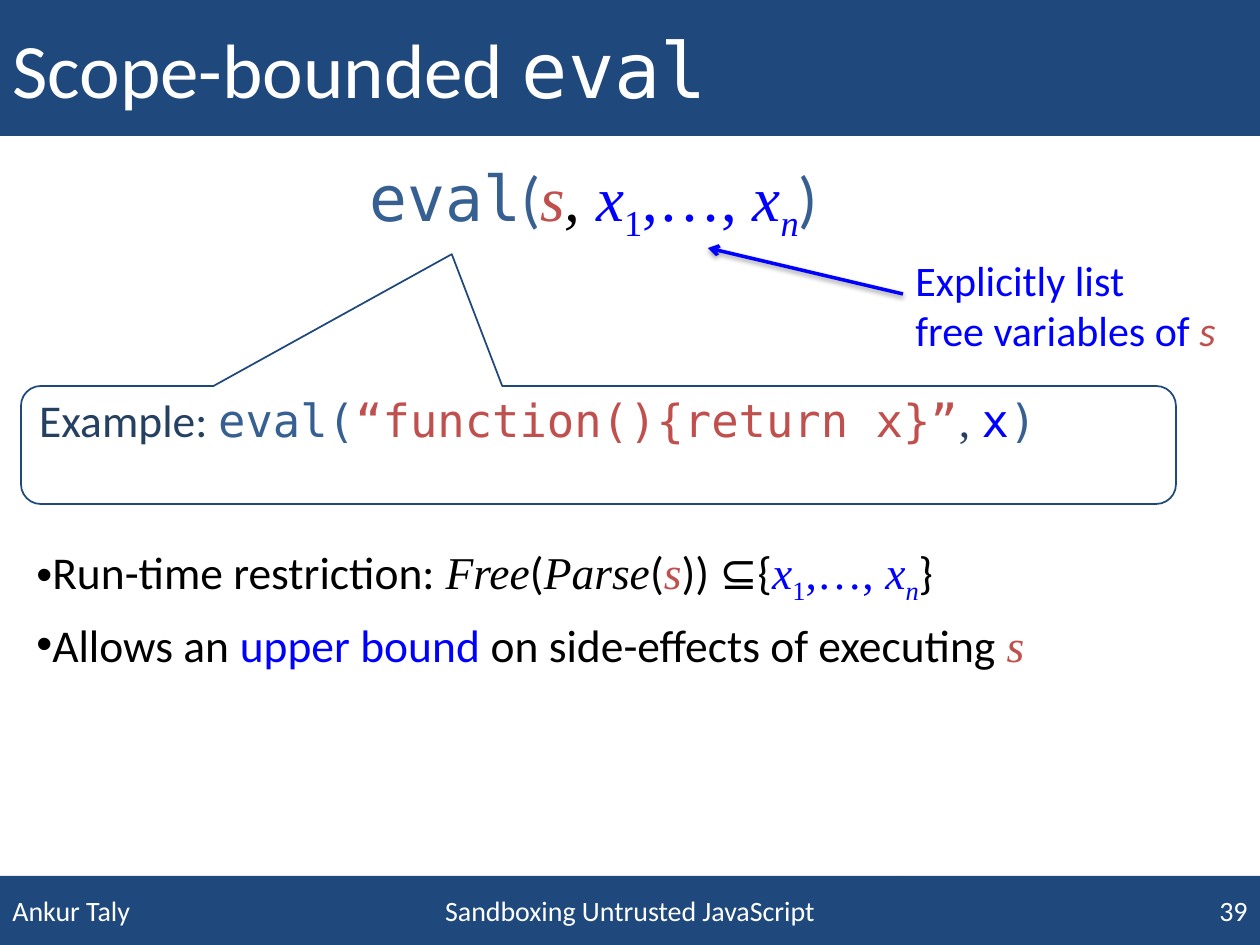
from lxml.etree import SubElement
from pptx import Presentation
from pptx.dml.color import RGBColor
from pptx.enum.shapes import MSO_CONNECTOR, MSO_SHAPE
from pptx.enum.text import MSO_ANCHOR as Anchor, MSO_AUTO_SIZE as AutoSize, PP_ALIGN as Align
from pptx.oxml.ns import qn
from pptx.util import Emu, Pt

SLIDE_WIDTH, SLIDE_HEIGHT = 1260, 945
COLORS = {
    "navy": "1F497D", "white": "FFFFFF", "black": "000000", "label": "254061",
    "steel": "376092", "red": "C0504D", "blue": "0000FF",
}
# Style name: font, italic, baseline shift in thousandths of a percent
STYLES = {
    "text": ("Calibri", False, 0),
    "slanted": ("Calibri", True, 0),
    "code": ("DejaVu Sans Mono", False, 0),
    "serif": ("Times New Roman", False, 0),
    "math": ("Times New Roman", True, 0),
    "sub": ("Times New Roman", False, -25000),
    "math sub": ("Times New Roman", True, -25000),
}
VARIABLES = [
    ("x", "math", "blue"), ("1", "sub", "blue"), (",…, ", "serif", "blue"),
    ("x", "math", "blue"), ("n", "math sub", "blue"),
]


def px(length):
    return Emu(round(length * 914400 / 126))


def color(name):
    return RGBColor.from_string(COLORS[name])


def write(frame, paragraphs, size, align=Align.LEFT):
    """Fill a text frame; each paragraph is a list of (text, style, color)."""
    frame.word_wrap = True
    for index, runs in enumerate(paragraphs):
        paragraph = frame.paragraphs[0] if index == 0 else frame.add_paragraph()
        paragraph.alignment = align
        for text, style, color_name in runs:
            run = paragraph.add_run()
            run.text = text
            font = run.font
            font.name, font.italic, baseline = STYLES[style]
            font.size = Pt(size)
            font.color.rgb = color(color_name)
            if baseline:
                font._element.set("baseline", str(baseline))


def add_text(slide, box, paragraphs, size):
    shape = slide.shapes.add_textbox(*map(px, box))
    write(shape.text_frame, paragraphs, size)
    shape.text_frame.auto_size = AutoSize.SHAPE_TO_FIT_TEXT
    return shape


def add_bar(slide, box, runs, size, align=Align.LEFT):
    bar = slide.shapes.add_shape(MSO_SHAPE.RECTANGLE, *map(px, box))
    bar.shadow.inherit = False
    bar.fill.solid()
    bar.fill.fore_color.rgb = color("navy")
    bar.line.fill.background()
    bar.text_frame.vertical_anchor = Anchor.MIDDLE
    write(bar.text_frame, [runs], size, align)


def add_footer(slide, box):
    left, top, width, height = box
    side = 357
    cells = [
        ("Ankur Taly", side, Align.LEFT),
        ("Sandboxing Untrusted JavaScript", width - 2 * side, Align.CENTER),
        ("39", side, Align.RIGHT),
    ]
    for text, cell_width, align in cells:
        add_bar(slide, (left, top, cell_width, height), [(text, "text", "white")], 16, align)
        left += cell_width


def add_example(slide, box):
    callout = slide.shapes.add_shape(MSO_SHAPE.ROUNDED_RECTANGULAR_CALLOUT, *map(px, box))
    for index, value in enumerate((-0.127, -1.617, 0.167)):
        callout.adjustments[index] = value
    callout.shadow.inherit = False
    callout.fill.solid()
    callout.fill.fore_color.rgb = color("white")
    callout.line.color.rgb = color("navy")
    callout.line.width = Pt(1)
    callout.text_frame.vertical_anchor = Anchor.TOP
    callout.text_frame.margin_top = 0
    write(callout.text_frame, [[
        ("Example: ", "text", "label"), ("eval(", "code", "steel"),
        ("“function(){return x}”", "code", "red"), (", ", "serif", "label"),
        ("x", "code", "blue"), (")", "code", "steel"),
    ]], 26)


def add_note(slide, box):
    """Note on the free variables, with an arrow back to the formula."""
    left, top, width, height = box
    add_text(slide, box, [
        [("Explicitly list", "text", "blue")],
        [("free variables of ", "text", "blue"), ("s", "slanted", "red")],
    ], 24)
    arrow = slide.shapes.add_connector(
        MSO_CONNECTOR.STRAIGHT, px(left), px(top + 46), px(left - 195), px(top))
    arrow.line.color.rgb = color("blue")
    arrow.line.width = Pt(2)
    SubElement(arrow.line._get_or_add_ln(), qn("a:tailEnd"), type="arrow")
    # Soft shadow straight below the arrow
    effects = SubElement(arrow._element.spPr, qn("a:effectLst"))
    shadow = SubElement(effects, qn("a:outerShdw"), blurRad=str(Pt(3.1)),
                        dist=str(Pt(1.6)), dir="5400000", rotWithShape="0")
    shade = SubElement(shadow, qn("a:srgbClr"), val=COLORS["black"])
    SubElement(shade, qn("a:alpha"), val="38000")


def add_bullets(slide, box):
    shape = add_text(slide, box, [
        [("Run-time restriction: ", "text", "black"), ("Free", "math", "black"),
         ("(", "text", "black"), ("Parse", "math", "black"), ("(", "text", "black"),
         ("s", "math", "red"), (")) ⊆{", "text", "black"), *VARIABLES,
         ("}", "text", "black")],
        [("Allows an ", "text", "black"), ("upper bound ", "text", "blue"),
         ("on side-effects of executing ", "text", "black"), ("s", "math", "red")],
    ], 26)
    for paragraph in shape.text_frame.paragraphs:
        paragraph.line_spacing = 1.2
        properties = paragraph._p.get_or_add_pPr()
        properties.set("marL", "0")
        properties.set("indent", str(-px(39)))
        SubElement(properties, qn("a:buFont"), typeface="Arial")
        SubElement(properties, qn("a:buChar"), char="•")


def add_formula(slide, box):
    add_text(slide, box, [[
        ("eval", "code", "steel"), ("(", "text", "steel"), ("s", "math", "red"),
        (", ", "math", "black"), *VARIABLES, (")", "text", "steel"),
    ]], 36)


def main():
    presentation = Presentation()
    presentation.slide_width = px(SLIDE_WIDTH)
    presentation.slide_height = px(SLIDE_HEIGHT)
    slide = presentation.slides.add_slide(presentation.slide_layouts[6])

    # Title and footer bars
    add_bar(slide, (0, 0, SLIDE_WIDTH, 136),
            [("Scope-bounded ", "text", "white"), ("eval", "code", "white")], 44)
    add_footer(slide, (0, 876, SLIDE_WIDTH, 69))

    # Body
    add_example(slide, (21, 386, 1155, 118))
    add_note(slide, (903, 248, 344, 115))
    add_bullets(slide, (24, 525, 1173, 189))
    add_formula(slide, (357, 152, 514, 89))

    presentation.save("out.pptx")


if __name__ == "__main__":
    main()
